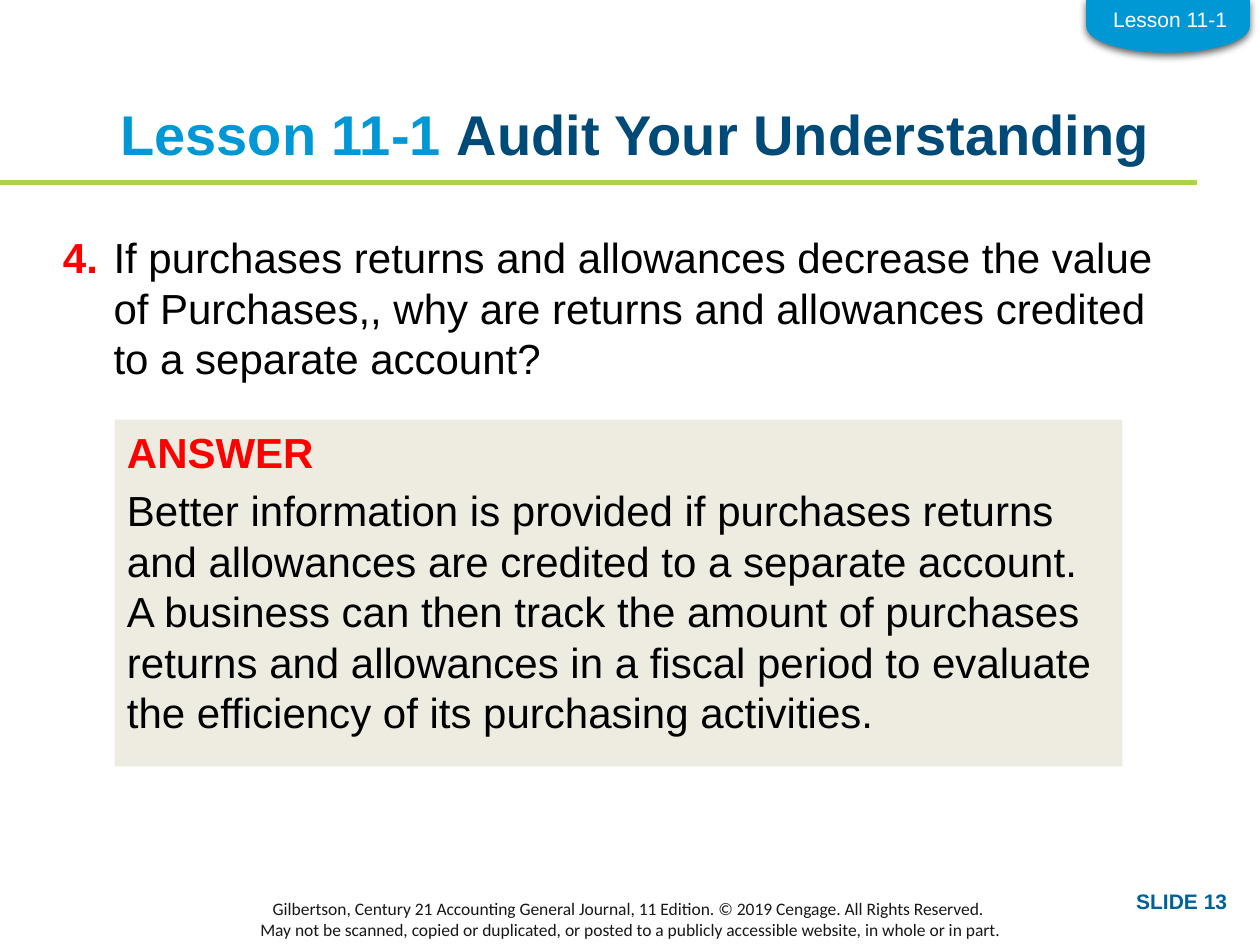
"""Build the Lesson 11-1 audit slide with its question and answer."""
from dataclasses import dataclass, field

from lxml.etree import SubElement
from pptx import Presentation
from pptx.dml.color import RGBColor
from pptx.enum.shapes import MSO_CONNECTOR, MSO_SHAPE
from pptx.enum.text import MSO_ANCHOR, PP_ALIGN
from pptx.oxml.ns import qn
from pptx.util import Cm, Pt

BLUE, NAVY, TEAL, GREEN = "0098D4", "004A78", "006198", "AAD24B"
RED, BLACK, WHITE, INK, SAND = "FF0000", "000000", "FFFFFF", "181717", "EEECE1"
STANDARD_INSETS = (0.25, 0.13)
NO_INSETS = (0, 0)


@dataclass
class Piece:
    text: str
    color: str
    size: float
    bold: bool = False
    font: str = "Arial"


@dataclass
class Block:
    box: tuple[float, float, float, float]
    paragraphs: list[list[Piece]]
    insets: tuple[float, float] = STANDARD_INSETS
    anchor: MSO_ANCHOR = MSO_ANCHOR.TOP
    wrap: bool = True
    fill: str | None = None
    gap: float = 0
    hanging: float = 0
    layout: dict = field(default_factory=dict)


def rgb(code: str) -> RGBColor:
    return RGBColor.from_string(code)


def apply(target, values: dict) -> None:
    for name, value in values.items():
        setattr(target, name, value)


def paint(shape, color: str) -> None:
    shape.shadow.inherit = False
    shape.fill.solid()
    shape.fill.fore_color.rgb = rgb(color)
    shape.line.fill.background()


def write(paragraph, pieces: list[Piece]) -> None:
    for piece in pieces:
        run = paragraph.add_run()
        run.text = piece.text
        apply(run.font, {"name": piece.font, "size": Pt(piece.size), "bold": piece.bold})
        run.font.color.rgb = rgb(piece.color)


def draw_block(slide, block: Block) -> None:
    place = [Cm(length) for length in block.box]
    if block.fill:
        holder = slide.shapes.add_shape(MSO_SHAPE.RECTANGLE, *place)
        paint(holder, block.fill)
    else:
        holder = slide.shapes.add_textbox(*place)
    frame = holder.text_frame
    side, edge = (Cm(inset) for inset in block.insets)
    apply(frame, {"word_wrap": block.wrap, "vertical_anchor": block.anchor,
                  "margin_left": side, "margin_right": side,
                  "margin_top": edge, "margin_bottom": edge})
    for index, pieces in enumerate(block.paragraphs):
        paragraph = frame.add_paragraph() if index else frame.paragraphs[0]
        apply(paragraph, {"alignment": PP_ALIGN.LEFT} | block.layout)
        if index and block.gap:
            paragraph.space_before = Pt(block.gap)
        if block.hanging:
            properties = paragraph._p.get_or_add_pPr()
            properties.set("marL", str(Cm(block.hanging)))
            properties.set("indent", str(-Cm(block.hanging)))
        write(paragraph, pieces)


def draw_rule(slide, width: float, top: float) -> None:
    rule = slide.shapes.add_connector(MSO_CONNECTOR.STRAIGHT, 0, Cm(top), Cm(width), Cm(top))
    rule.line.color.rgb = rgb(GREEN)
    rule.line.width = Pt(3)
    SubElement(rule._element.spPr, qn("a:effectLst"))


def draw_tab(slide) -> None:
    tab = slide.shapes.add_shape(MSO_SHAPE.FLOWCHART_DELAY, Cm(23.01), Cm(-1.12), Cm(1.07), Cm(3.3))
    tab.rotation = 90
    paint(tab, BLUE)
    effects = tab._element.spPr.find(qn("a:effectLst"))
    shadow = SubElement(effects, qn("a:outerShdw"), blurRad=str(Pt(4.5)), dist=str(Pt(1.5)),
                        dir="5400000", algn="t", rotWithShape="0")
    tint = SubElement(shadow, qn("a:srgbClr"), val=BLACK)
    SubElement(tint, qn("a:alpha"), val="63000")


CENTERED = {"alignment": PP_ALIGN.CENTER}

COPYRIGHT = Block((0, 18.14, 25.4, 0.76), [
    [Piece("Gilbertson, Century 21 Accounting General Journal, 11 Edition. "
           "© 2019 Cengage. All Rights Reserved. ", INK, 10, font="Calibri")],
    [Piece("May not be scanned, copied or duplicated, or posted to a publicly "
           "accessible website, in whole or in part.", INK, 10, font="Calibri")],
], anchor=MSO_ANCHOR.MIDDLE, layout=CENTERED)

TITLE = Block((1.27, 2.01, 23.06, 1.88), [
    [Piece("Lesson 11-1 ", BLUE, 32, True), Piece("Audit Your Understanding", NAVY, 32, True)],
], insets=NO_INSETS, layout=CENTERED | {"space_after": Pt(6)})

QUESTION = Block((1.27, 4.67, 22.33, 3.91), [
    [Piece("4.\t", RED, 24, True),
     Piece("If purchases returns and allowances decrease the value of Purchases,, "
           "why are returns and allowances credited to a separate account?", BLACK, 24)],
], insets=NO_INSETS, hanging=1.02, layout={"space_after": Pt(6)})

ANSWER = Block((2.31, 8.46, 20.32, 6.99), [
    [Piece("ANSWER", RED, 24, True)],
    [Piece("Better information is provided if purchases returns and allowances are "
           "credited to a separate account. A business can then track the amount of "
           "purchases returns and allowances in a fiscal period to evaluate the "
           "efficiency of its purchasing activities.", BLACK, 24)],
], fill=SAND, gap=4.8)

SLIDE_NUMBER = Block((19.91, 17.78, 5.08, 0.76), [[Piece("SLIDE 13", TEAL, 12, True)]],
                     layout={"alignment": PP_ALIGN.RIGHT})

TAB_LABEL = Block((22.17, 0, 2.84, 0.76), [[Piece("Lesson 11-1", WHITE, 12)]],
                  wrap=False, layout=CENTERED)


def main() -> None:
    deck = Presentation()
    apply(deck, {"slide_width": Cm(25.4), "slide_height": Cm(19.05)})
    slide = deck.slides.add_slide(deck.slide_layouts[6])
    draw_rule(slide, 24.13, 3.68)
    for block in (COPYRIGHT, TITLE, QUESTION, ANSWER, SLIDE_NUMBER):
        draw_block(slide, block)
    draw_tab(slide)
    draw_block(slide, TAB_LABEL)
    deck.save("out.pptx")


if __name__ == "__main__":
    main()
